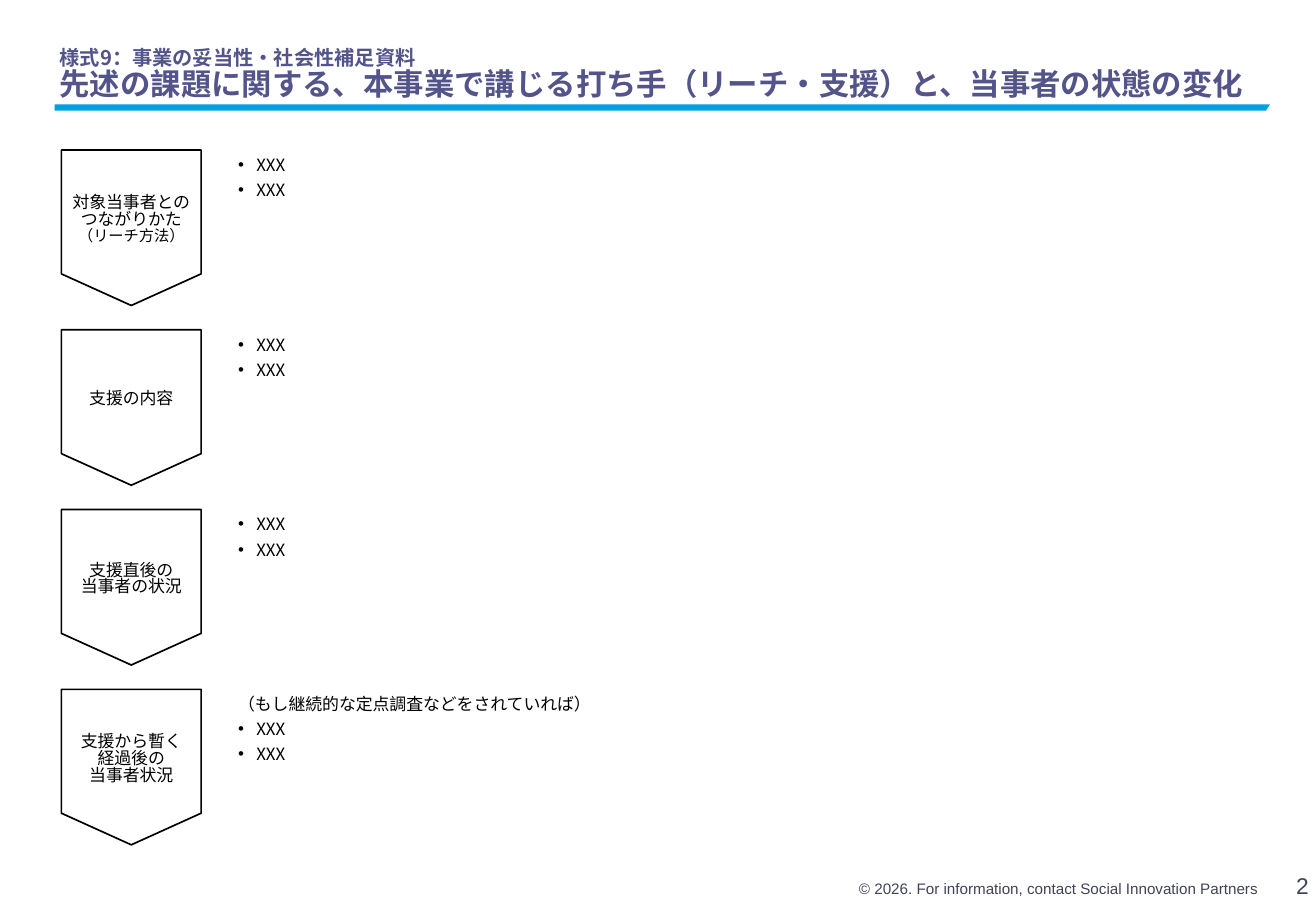
from dataclasses import dataclass

from lxml.etree import SubElement
from pptx import Presentation
from pptx.dml.color import RGBColor
from pptx.enum.shapes import MSO_SHAPE as Kind
from pptx.enum.text import MSO_ANCHOR as Anchor, MSO_AUTO_SIZE as Fit, PP_ALIGN as Align
from pptx.oxml.ns import qn
from pptx.util import Pt

PX = 9144  # 100 px to the inch
SANS, LATIN = "Noto Sans CJK JP", "Arial"
HEX = {"ink": "000000", "title": "53548A", "foot": "424456",
       "bar": "00A1DE", "paper": "FFFFFF"}


@dataclass(frozen=True)
class Run:
    text: str
    size: float


@dataclass(frozen=True)
class Par:
    runs: tuple[Run, ...]
    mark: bool = False


@dataclass(frozen=True)
class Step:
    label: tuple[Par, ...]
    notes: tuple[Par, ...]


def par(text: str, size: float = 10, mark: bool = False) -> Par:
    return Par((Run(text, size),), mark)


def rgb(name: str) -> RGBColor:
    return RGBColor.from_string(HEX[name])


def px(*sizes: int) -> list[int]:
    return [size * PX for size in sizes]


def write(shape, pars, *, font=SANS, color="ink", bold=False, align=Align.LEFT,
          anchor=Anchor.TOP, inset=0, gap=0.0, line=1.0, wrap=True) -> None:
    frame = shape.text_frame
    frame.auto_size, frame.word_wrap = Fit.NONE, wrap
    frame.vertical_anchor = anchor
    frame.margin_left = frame.margin_right = inset * PX
    frame.margin_top = frame.margin_bottom = inset * PX
    for i, item in enumerate(pars):
        p = frame.add_paragraph() if i else frame.paragraphs[0]
        p.alignment, p.line_spacing = align, line
        p.space_before = Pt(gap if i else 0)
        if item.mark:
            props = p._p.get_or_add_pPr()
            props.set("marL", str(15 * PX))
            props.set("indent", str(-15 * PX))
            SubElement(props, qn("a:buFont"), typeface=LATIN)
            SubElement(props, qn("a:buChar"), char="•")
        for run in item.runs:
            for j, part in enumerate(run.text.split("\n")):
                if j:
                    p.add_line_break()
                if not part:
                    continue
                r = p.add_run()
                r.text = part
                r.font.size, r.font.bold = Pt(run.size), bold
                r.font.color.rgb = rgb(color)
                r.font.name = font
                SubElement(r._r.get_or_add_rPr(), qn("a:ea"), typeface=font)


def block(slide, kind: Kind, box: list[int], edge: bool = False):
    shape = slide.shapes.add_shape(kind, *box)
    shape.shadow.inherit = False
    shape.fill.solid()
    shape.fill.fore_color.rgb = rgb("paper")
    if edge:
        shape.line.color.rgb = rgb("ink")
        shape.line.width = Pt(1)
    else:
        shape.line.fill.background()
    return shape


def draw_step(slide, step: Step, top: int) -> None:
    # Notes beside the arrow
    notes = block(slide, Kind.RECTANGLE, px(190, top, 854, 128))
    write(notes, step.notes, inset=6, gap=4.9, line=0.83)
    # Arrow turned to point down, with level text
    arrow = block(slide, Kind.PENTAGON, px(44, top + 6, 128, 115), edge=True)
    arrow.adjustments[0] = 0.226
    arrow.rotation = 90
    arrow.text_frame._txBody.bodyPr.set("vert", "vert270")
    write(arrow, step.label, align=Align.CENTER, anchor=Anchor.MIDDLE,
          inset=6, line=0.83)


def draw_bar(slide) -> None:
    pen = slide.shapes.build_freeform(45, 86, scale=float(PX))
    pen.add_line_segments([(1045, 86), (1042, 91), (45, 91)], close=True)
    bar = pen.convert_to_shape()
    bar.shadow.inherit = False
    bar.fill.solid()
    bar.fill.fore_color.rgb = rgb("bar")
    bar.line.fill.background()


ITEMS = (par("XXX", mark=True),) * 2
STEPS = (
    Step((Par((Run("対象当事者との\nつながりかた", 10), Run("（リーチ方法）", 9))),), ITEMS),
    Step((par("支援の内容"),), ITEMS),
    Step((par("支援直後の"), par("当事者の状況")), ITEMS),
    Step((par("支援から暫く\n経過後の\n当事者状況"),),
         (par("（もし継続的な定点調査などをされていれば）"), *ITEMS)),
)
TITLE = Par((
    Run("様式9：事業の妥当性・社会性補足資料\n", 12),
    Run("先述の課題に関する、本事業で講じる打ち手（リーチ・支援）と、当事者の状態の変化", 18),
))
FOOT = "© 2026. For information, contact Social Innovation Partners"


def main() -> None:
    deck = Presentation()
    deck.slide_width, deck.slide_height = px(1083, 750)
    slide = deck.slides.add_slide(deck.slide_layouts[5])

    # Title and rule
    title = slide.shapes.title
    title.left, title.top, title.width, title.height = px(49, 13, 1011, 71)
    write(title, [TITLE], color="title", bold=True, anchor=Anchor.BOTTOM, line=0.88)
    draw_bar(slide)

    # Steps
    for i, step in enumerate(STEPS):
        draw_step(slide, step, 124 + 148 * i)

    # Footer and page number
    for text, size, box, wrap in (
        (FOOT, 9, (590, 720, 445, 19), True),
        ("2", 13.5, (1057, 721, 20, 19), False),
    ):
        note = slide.shapes.add_textbox(*px(*box))
        write(note, [par(text, size)], font=LATIN, color="foot",
              align=Align.RIGHT, anchor=Anchor.BOTTOM, wrap=wrap)

    deck.save("out.pptx")


if __name__ == "__main__":
    main()
